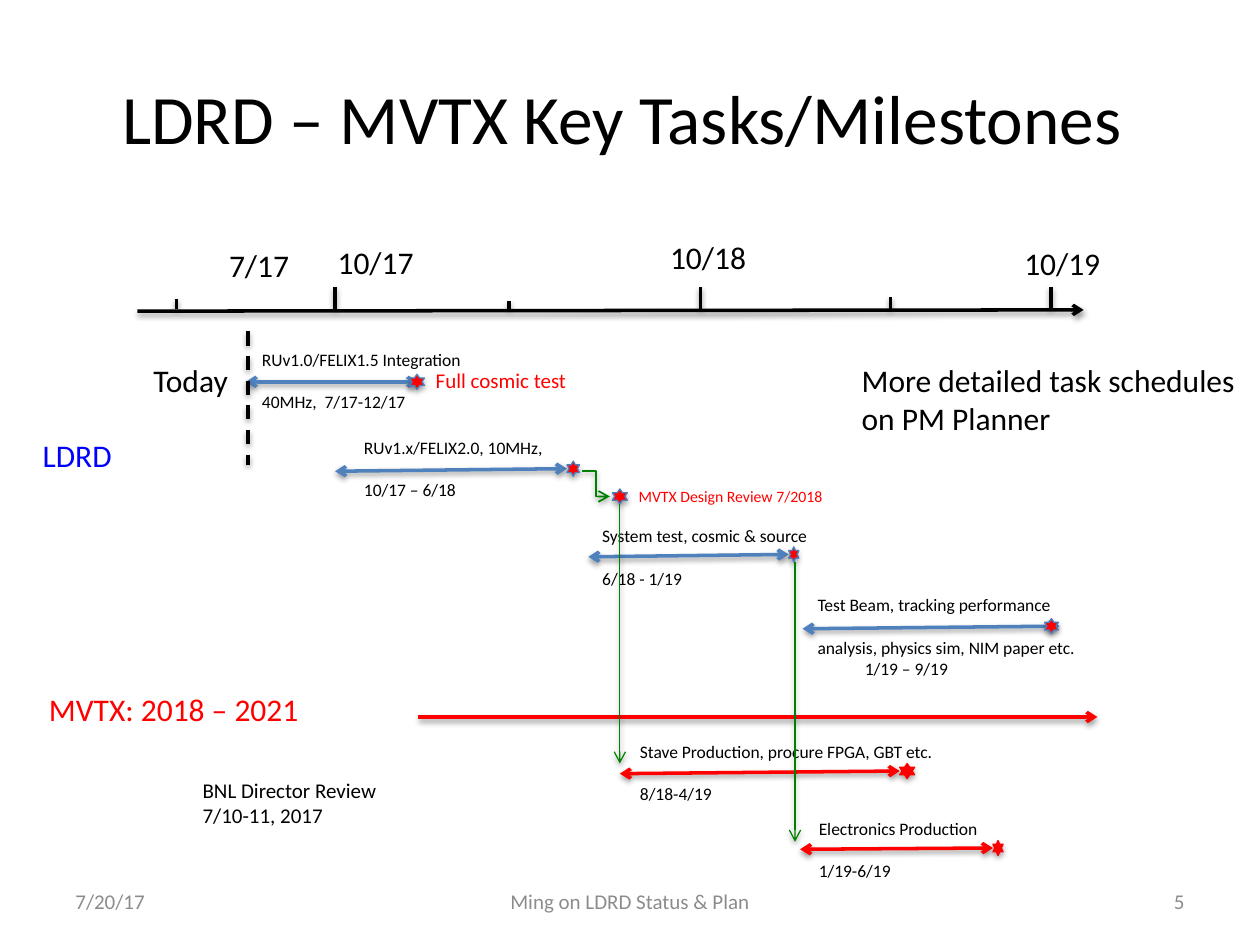
"""Build the LDRD and MVTX milestone timeline slide."""
from dataclasses import dataclass

from lxml import etree
from pptx import Presentation
from pptx.dml.color import RGBColor
from pptx.enum.dml import MSO_LINE
from pptx.enum.shapes import MSO_CONNECTOR, MSO_SHAPE
from pptx.enum.text import MSO_ANCHOR, MSO_AUTO_SIZE, PP_ALIGN
from pptx.oxml.ns import qn
from pptx.util import Pt

STRAIGHT, ELBOW = MSO_CONNECTOR.STRAIGHT, MSO_CONNECTOR.ELBOW
STAR, DASH = MSO_SHAPE.STAR_6_POINT, MSO_LINE.DASH
TOP, MIDDLE = MSO_ANCHOR.TOP, MSO_ANCHOR.MIDDLE
LEFT, CENTER, RIGHT = PP_ALIGN.LEFT, PP_ALIGN.CENTER, PP_ALIGN.RIGHT
GROW, FIXED = MSO_AUTO_SIZE.SHAPE_TO_FIT_TEXT, MSO_AUTO_SIZE.NONE

BLACK, RED, GREEN, BLUE = "000000", "FF0000", "008000", "0000FF"
TASK_BLUE, STAR_EDGE, GRAY = "4F81BD", "4B7EBC", "8C8C8C"
STAR_HEIGHT = 8.6
TASK_SIZE = 10
BLANK_LINE = 12.2
AXIS_BOTTOM = 176.4


@dataclass
class Label:
    left: float
    top: float
    width: float
    height: float
    lines: tuple[str, ...]
    size: float
    color: str = BLACK
    align: PP_ALIGN = LEFT
    anchor: MSO_ANCHOR = TOP
    wrap: bool = False


@dataclass
class Stroke:
    start: tuple[float, float]
    end: tuple[float, float]
    color: str = BLACK
    width: float = 2
    head: bool = False
    tail: bool = False
    dashed: bool = False
    kind: MSO_CONNECTOR = STRAIGHT


@dataclass
class Star:
    left: float
    top: float
    width: float
    edge: str = STAR_EDGE


@dataclass
class Task:
    lines: tuple[str, ...]
    label: tuple[float, float, float]
    start: tuple[float, float]
    end: tuple[float, float]
    star_left: float
    star_width: float
    color: str = TASK_BLUE
    edge: str = STAR_EDGE
    last_indent: float = 0


TASKS = (
    Task(("RUv1.0/FELIX1.5 Integration", "40MHz,  7/17-12/17"),
         (142.6, 195.8, 159), (140.4, 218.2), (239, 218.2), 234, 8.6),
    Task(("RUv1.x/FELIX2.0, 10MHz,", "10/17 – 6/18"),
         (200.9, 246.2, 155.5), (191.5, 269.3), (324, 267.8), 324, 7.2),
    Task(("System test, cosmic & source", "6/18 - 1/19"),
         (337, 296.6, 134), (336.2, 318.2), (450.7, 316.8), 450.7, 5.8),
    Task(("Test Beam, tracking performance",
          "analysis, physics sim, NIM paper etc.", "1/19 – 9/19"),
         (460.1, 336.2, 172.8), (458.6, 359.3), (605.5, 357.8), 596.9, 7.9,
         last_indent=27),
    Task(("Stave Production, procure FPGA, GBT etc.", "8/18-4/19"),
         (358.6, 419.8, 185), (354.2, 442.1), (514.1, 440.6), 514.1, 8.6, RED, RED),
    Task(("Electronics Production", "1/19-6/19"),
         (460.8, 463.7, 124.6), (457.2, 485.3), (567.4, 484.6), 567.4, 5.8, RED, RED),
)
TICKS = ((100.8, 170.6), (191.5, 164.2), (290.9, 172.1), (400.3, 164.2),
         (509, 169.9), (600.5, 164.2))
STROKES = (
    Stroke((78.5, 177.8), (619.2, 177.1), tail=True),
    *(Stroke((x, y), (x, AXIS_BOTTOM)) for x, y in TICKS),
    Stroke((239, 409.7), (627.1, 409.7), RED, tail=True),
    Stroke((354.2, 288), (354.2, 436.3), GREEN, 0.75, tail=True),
    Stroke((454.3, 321.1), (454.3, 481), GREEN, 0.75, tail=True),
    Stroke((332.6, 269.3), (348.5, 283.7), GREEN, 1, tail=True, kind=ELBOW),
    Stroke((141.8, 189.4), (141.8, 265.7), dashed=True),
)
LABELS = (
    Label(36, 21.6, 648, 90, ("LDRD – MVTX Key Tasks/Milestones ",), 39.6,
          align=CENTER, anchor=MIDDLE, wrap=True),
    Label(123.8, 136.8, 49, 29, ("7/17",), 18),
    Label(185.8, 135.4, 58.3, 29, ("10/17",), 18),
    Label(375.8, 132.5, 58.3, 29, ("10/18",), 18),
    Label(578.2, 136.1, 58.3, 29, ("10/19",), 18),
    Label(80.6, 203, 59.8, 29, ("Today",), 18),
    Label(17.3, 245.5, 54.7, 29, ("LDRD",), 18, BLUE),
    Label(20.9, 391, 158.4, 29, ("MVTX: 2018 – 2021",), 18, RED),
    Label(357.8, 274.3, 121, 18, ("MVTX Design Review 7/2018",), 9, RED),
    Label(241.9, 206.6, 90, 21.6, ("Full cosmic test",), 12, RED),
    Label(485.3, 203, 230.4, 51, ("More detailed task schedules", "on PM Planner"), 18),
    Label(108.7, 440.6, 115.2, 36, ("BNL Director Review", "7/10-11, 2017"), 12),
    Label(36, 500.4, 168, 28.8, ("7/20/17",), 12, GRAY, LEFT, MIDDLE, True),
    Label(246, 500.4, 228, 28.8, ("Ming on LDRD Status & Plan",), 12, GRAY,
          CENTER, MIDDLE, True),
    Label(516, 500.4, 168, 28.8, ("5",), 12, GRAY, RIGHT, MIDDLE, True),
)


def rgb(color: str) -> RGBColor:
    """Turn a hex string into a colour."""
    return RGBColor.from_string(color)


def apply(target, values: dict) -> None:
    """Set each named attribute on the target."""
    for name, value in values.items():
        setattr(target, name, value)


def add_shadow(shape, opacity: int, distance: float) -> None:
    """Give a shape a soft shadow that falls straight down."""
    effects = etree.SubElement(shape._element.spPr, qn("a:effectLst"))
    outer = etree.SubElement(effects, qn("a:outerShdw"), blurRad=str(Pt(3.1)),
                             dist=str(Pt(distance)), dir="5400000", rotWithShape="0")
    color = etree.SubElement(outer, qn("a:srgbClr"), val=BLACK)
    etree.SubElement(color, qn("a:alpha"), val=str(opacity * 1000))


def add_label(page, label: Label):
    """Write a text box with one paragraph for each line and return its paragraphs."""
    box = page.shapes.add_textbox(
        Pt(label.left), Pt(label.top), Pt(label.width), Pt(label.height))
    frame = box.text_frame
    apply(frame, {"word_wrap": label.wrap, "vertical_anchor": label.anchor,
                  "auto_size": FIXED if label.anchor == MIDDLE else GROW})
    for index, line in enumerate(label.lines):
        para = frame.add_paragraph() if index else frame.paragraphs[0]
        para.alignment = label.align
        span = para.add_run()
        span.text = line
        apply(span.font, {"name": "Calibri", "size": Pt(label.size)})
        span.font.color.rgb = rgb(label.color)
    return frame.paragraphs


def add_stroke(page, stroke: Stroke) -> None:
    """Draw a shadowed connector with its arrowheads."""
    line = page.shapes.add_connector(
        stroke.kind, *(Pt(value) for value in stroke.start + stroke.end))
    apply(line.line, {"width": Pt(stroke.width),
                      "dash_style": DASH if stroke.dashed else None})
    line.line.color.rgb = rgb(stroke.color)
    for tag, wanted in (("a:headEnd", stroke.head), ("a:tailEnd", stroke.tail)):
        if wanted:
            etree.SubElement(line.line._get_or_add_ln(), qn(tag), type="arrow")
    add_shadow(line, 38, 1.6)


def add_star(page, star: Star) -> None:
    """Draw a red milestone star."""
    shape = page.shapes.add_shape(
        STAR, Pt(star.left), Pt(star.top), Pt(star.width), Pt(STAR_HEIGHT))
    shape.fill.solid()
    shape.fill.fore_color.rgb = rgb(RED)
    shape.line.color.rgb = rgb(star.edge)
    shape.line.width = Pt(0.75)
    add_shadow(shape, 35, 1.8)


def add_task(page, task: Task) -> None:
    """Draw a task's arrow, its closing star and the text around them."""
    add_stroke(page, Stroke(task.start, task.end, task.color, head=True, tail=True))
    add_star(page, Star(task.star_left, task.end[1] - STAR_HEIGHT / 2,
                        task.star_width, task.edge))
    height = 7.2 + BLANK_LINE * (len(task.lines) + 1)
    paras = add_label(page, Label(*task.label, height, task.lines, TASK_SIZE, wrap=True))
    paras[1].space_before = Pt(BLANK_LINE)
    if task.last_indent:
        paras[-1]._p.get_or_add_pPr().set("marL", str(Pt(task.last_indent)))


def main() -> None:
    """Build and save the deck."""
    deck = Presentation()
    apply(deck, {"slide_width": Pt(720), "slide_height": Pt(540)})
    page = deck.slides.add_slide(deck.slide_layouts[6])
    for task in TASKS:
        add_task(page, task)
    add_star(page, Star(349.9, 279.4, 8.6))
    for stroke in STROKES:
        add_stroke(page, stroke)
    for label in LABELS:
        add_label(page, label)
    deck.save("out.pptx")


if __name__ == "__main__":
    main()
